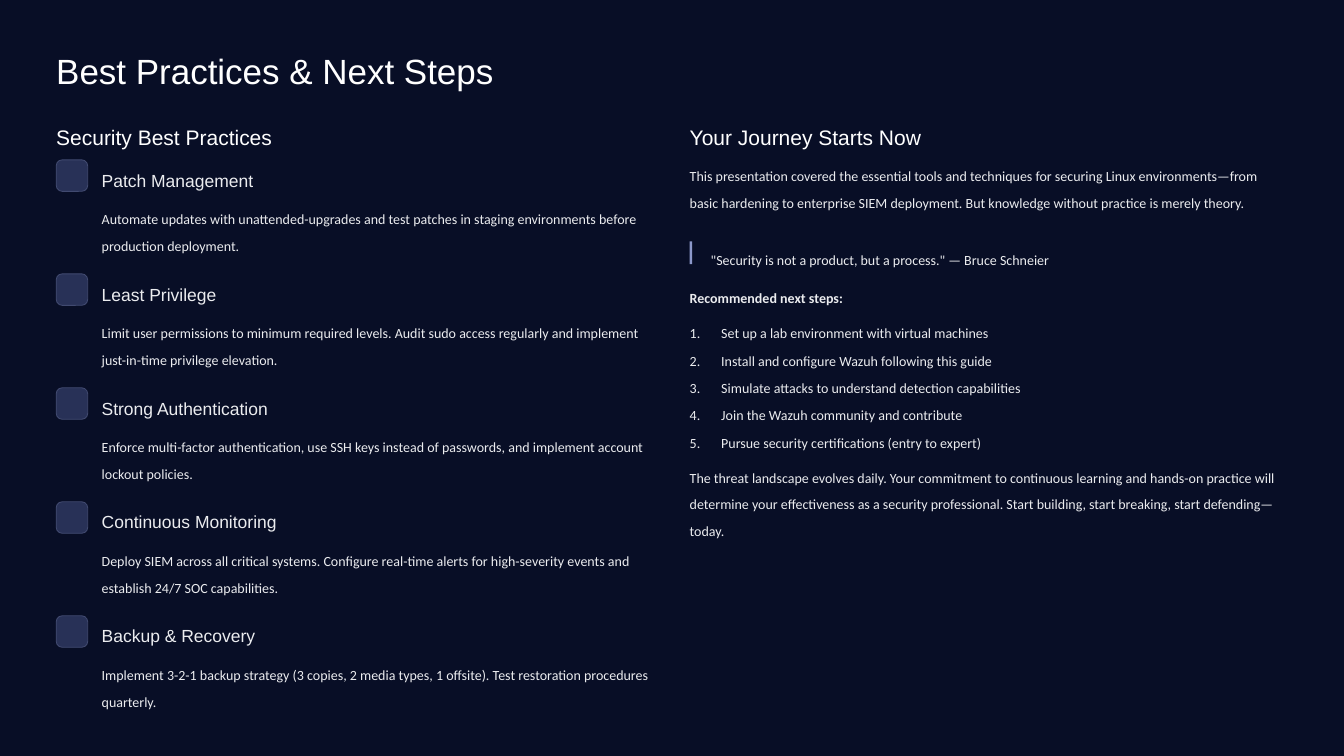
from lxml.etree import SubElement
from pptx import Presentation
from pptx.dml.color import RGBColor
from pptx.enum.shapes import MSO_SHAPE as Shape
from pptx.enum.text import MSO_ANCHOR as Anchor, MSO_AUTO_SIZE as AutoSize, PP_ALIGN as Align
from pptx.oxml.ns import qn
from pptx.util import Pt

WHITE, PALE = "FFFFFF", "EBECEF"
NAVY, INDIGO, OUTLINE, ACCENT = "080E26", "283157", "414A70", "8C98CA"
LEFT, LEFT_TEXT, RIGHT = 48.2, 87.2, 591.2
COLUMN_WIDTH = 513
FIRST_PRACTICE_TOP, PRACTICE_PITCH = 137, 97.7
ICON_SIZE = 27
TITLE_STYLE = ("Arial", 30, WHITE, 1.25)
SECTION_STYLE = ("Arial", 18, WHITE, 1.25)
HEADING_STYLE = ("Arial", 15, PALE, 1.23)
BODY_STYLE = ("Calibri", 12, PALE, 1.58)

PRACTICES = [
    ("Patch Management",
     "Automate updates with unattended-upgrades and test patches in staging "
     "environments before production deployment."),
    ("Least Privilege",
     "Limit user permissions to minimum required levels. Audit sudo access regularly "
     "and implement just-in-time privilege elevation."),
    ("Strong Authentication",
     "Enforce multi-factor authentication, use SSH keys instead of passwords, "
     "and implement account lockout policies."),
    ("Continuous Monitoring",
     "Deploy SIEM across all critical systems. Configure real-time alerts for "
     "high-severity events and establish 24/7 SOC capabilities."),
    ("Backup & Recovery",
     "Implement 3-2-1 backup strategy (3 copies, 2 media types, 1 offsite). "
     "Test restoration procedures quarterly."),
]
INTRODUCTION = (
    "This presentation covered the essential tools and techniques for securing Linux "
    "environments—from basic hardening to enterprise SIEM deployment. But knowledge "
    "without practice is merely theory.")
QUOTE = '"Security is not a product, but a process." — Bruce Schneier'
STEPS = [
    "Set up a lab environment with virtual machines",
    "Install and configure Wazuh following this guide",
    "Simulate attacks to understand detection capabilities",
    "Join the Wazuh community and contribute",
    "Pursue security certifications (entry to expert)",
]
CLOSING = (
    "The threat landscape evolves daily. Your commitment to continuous learning and "
    "hands-on practice will determine your effectiveness as a security professional. "
    "Start building, start breaking, start defending—today.")


def color(value):
    """Return the colour for a hex string."""
    return RGBColor.from_string(value)


def place(shape, left, top, width, height):
    """Set the position and size of a shape in points."""
    shape.left, shape.top = Pt(left), Pt(top)
    shape.width, shape.height = Pt(width), Pt(height)


def write(shape, text, style, bold=False):
    """Fill a shape with text in the given style."""
    font_name, size, font_color, line_spacing = style
    frame = shape.text_frame
    frame.text = text
    frame.word_wrap = True
    frame.auto_size = AutoSize.NONE
    frame.vertical_anchor = Anchor.TOP
    frame.margin_left = frame.margin_right = frame.margin_top = frame.margin_bottom = 0
    for paragraph in frame.paragraphs:
        paragraph.alignment = Align.LEFT
        paragraph.line_spacing = line_spacing
        paragraph.space_before = Pt(0)
        for run in paragraph.runs:
            run.font.name, run.font.size, run.font.bold = font_name, Pt(size), bold
            run.font.color.rgb = color(font_color)


def add_text(slide, text, box, style, bold=False):
    """Add a text box."""
    shape = slide.shapes.add_textbox(*map(Pt, box))
    write(shape, text, style, bold)


def add_block(slide, kind, box, fill, line=None):
    """Add a filled shape with an optional outline."""
    shape = slide.shapes.add_shape(kind, *map(Pt, box))
    shape.shadow.inherit = False
    shape.fill.solid()
    shape.fill.fore_color.rgb = color(fill)
    if line:
        shape.line.color.rgb = color(line)
        shape.line.width = Pt(0.75)
    else:
        shape.line.fill.background()
    return shape


def add_practice(slide, top, heading, description):
    """Add one practice with its icon tile, heading and description."""
    tile = add_block(slide, Shape.ROUNDED_RECTANGLE, (LEFT, top, ICON_SIZE, ICON_SIZE), INDIGO, OUTLINE)
    tile.adjustments[0] = 0.19
    add_text(slide, heading, (LEFT_TEXT, top + 4.2, 180, 19), HEADING_STYLE)
    add_text(slide, description, (LEFT_TEXT, top + 35.2, 474, 39), BODY_STYLE)


def fill_steps(placeholder):
    """Write the numbered next steps in the body placeholder."""
    place(placeholder, RIGHT, 270, COLUMN_WIDTH, 117)
    write(placeholder, "\n".join(STEPS), BODY_STYLE)
    for index, paragraph in enumerate(placeholder.text_frame.paragraphs):
        paragraph.space_before = Pt(0.7 if index else 0)
        properties = paragraph._p.get_or_add_pPr()
        properties.set("marL", str(Pt(27)))
        properties.set("indent", str(Pt(-27)))
        bullet_color = SubElement(properties, qn("a:buClr"))
        SubElement(bullet_color, qn("a:srgbClr"), val=PALE)
        SubElement(properties, qn("a:buAutoNum"), type="arabicPeriod")


def add_journey(slide):
    """Add the text of the right column around the numbered steps."""
    add_text(slide, "Your Journey Starts Now", (RIGHT, 101.2, 260, 21), SECTION_STYLE)
    add_text(slide, INTRODUCTION, (RIGHT, 135.4, COLUMN_WIDTH, 58), BODY_STYLE)
    add_block(slide, Shape.RECTANGLE, (RIGHT, 207, 2, 19.5), ACCENT)
    add_text(slide, QUOTE, (RIGHT + 18, 207, COLUMN_WIDTH - 18, 19.5), BODY_STYLE)
    add_text(slide, "Recommended next steps:", (RIGHT, 240, COLUMN_WIDTH, 19.5), BODY_STYLE, bold=True)
    add_text(slide, CLOSING, (RIGHT, 394, COLUMN_WIDTH, 58), BODY_STYLE)


def main():
    """Build and save the presentation."""
    presentation = Presentation()
    presentation.slide_width, presentation.slide_height = Pt(1152), Pt(648)
    slide = presentation.slides.add_slide(presentation.slide_layouts[1])
    background = slide.background.fill
    background.solid()
    background.fore_color.rgb = color(NAVY)

    title, steps = slide.placeholders
    place(title, LEFT, 33.4, 443, 45)
    write(title, "Best Practices & Next Steps", TITLE_STYLE)
    add_text(slide, "Security Best Practices", (LEFT, 101.2, 200, 22), SECTION_STYLE)
    for index, (heading, description) in enumerate(PRACTICES):
        add_practice(slide, FIRST_PRACTICE_TOP + index * PRACTICE_PITCH, heading, description)
    add_journey(slide)
    fill_steps(steps)
    presentation.save("out.pptx")


if __name__ == "__main__":
    main()
